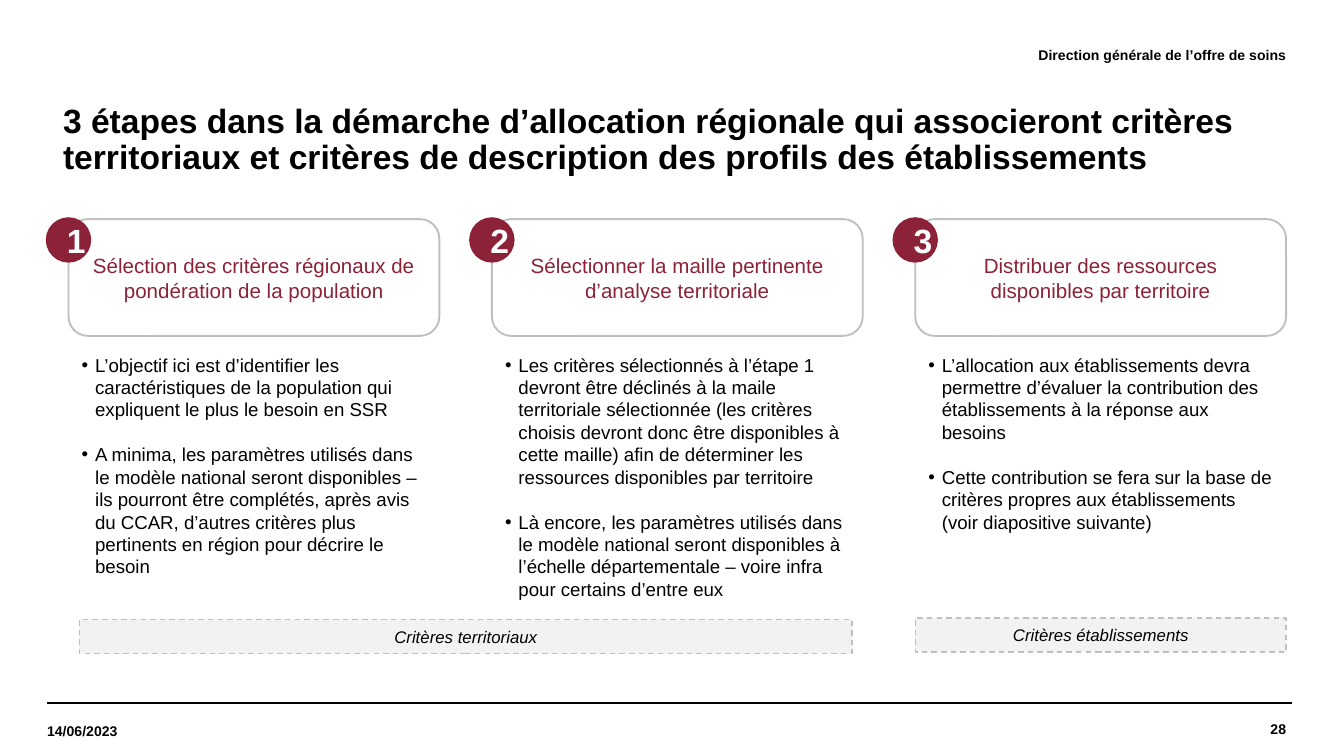
from lxml import etree
from pptx import Presentation
from pptx.dml.color import RGBColor
from pptx.enum import dml, shapes, text
from pptx.oxml import ns
from pptx.util import Pt

BLACK = RGBColor(0x00, 0x00, 0x00)
WHITE = RGBColor(0xFF, 0xFF, 0xFF)
WINE = RGBColor(0x8C, 0x22, 0x37)
GREY = RGBColor(0xBF, 0xBF, 0xBF)
PALE = RGBColor(0xF2, 0xF2, 0xF2)

FONT = "Arial"
LEFT = 36.7
STEP = 226.8
CARD_WIDTH = 198.7
CARD_TOP = 117.4
BADGE = 22.3

TITLE = (
    "3 étapes dans la démarche d’allocation régionale qui associeront critères "
    "territoriaux et critères de description des profils des établissements"
)
STEPS = [
    (
        "Sélection des critères régionaux de pondération de la population",
        [
            "L’objectif ici est d’identifier les caractéristiques de la population "
            "qui expliquent le plus le besoin en SSR",
            "A minima, les paramètres utilisés dans le modèle national seront "
            "disponibles – ils pourront être complétés, après avis du CCAR, d’autres "
            "critères plus pertinents en région pour décrire le besoin",
        ],
        128,
    ),
    (
        "Sélectionner la maille pertinente d’analyse territoriale",
        [
            "Les critères sélectionnés à l’étape 1 devront être déclinés à la maile "
            "territoriale sélectionnée (les critères choisis devront donc être "
            "disponibles à cette maille) afin de déterminer les ressources "
            "disponibles par territoire",
            "Là encore, les paramètres utilisés dans le modèle national seront "
            "disponibles à l’échelle départementale – voire infra pour certains "
            "d’entre eux",
        ],
        140,
    ),
    (
        "Distribuer des ressources disponibles par territoire",
        [
            "L’allocation aux établissements devra permettre d’évaluer la "
            "contribution des établissements à la réponse aux besoins",
            "Cette contribution se fera sur la base de critères propres aux "
            "établissements (voir diapositive suivante)",
        ],
        104,
    ),
]


def style(para, size, color=BLACK, align=text.PP_ALIGN.LEFT, bold=False, italic=False):
    para.alignment = align
    font = para.font
    font.name, font.size = FONT, Pt(size)
    font.bold, font.italic = bold, italic
    font.color.rgb = color


def add_title(page):
    title = page.shapes.title
    title.left, title.top, title.width, title.height = Pt(25.2), Pt(54), Pt(663), Pt(42.5)
    frame = title.text_frame
    frame.text = TITLE
    frame.word_wrap = True
    frame.auto_size = text.MSO_AUTO_SIZE.NONE
    frame.vertical_anchor = text.MSO_ANCHOR.MIDDLE
    frame.margin_left = Pt(8.6)
    para = frame.paragraphs[0]
    para.line_spacing = 0.9
    style(para, 18, bold=True)


def add_shape(page, kind, place, wording, size, fill, line, weight, **looks):
    shape = page.shapes.add_shape(kind, *map(Pt, place))
    shape.shadow.inherit = False
    shape.fill.solid()
    shape.fill.fore_color.rgb = fill
    shape.line.color.rgb = line
    shape.line.width = Pt(weight)
    frame = shape.text_frame
    frame.text = wording
    frame.vertical_anchor = text.MSO_ANCHOR.MIDDLE
    style(frame.paragraphs[0], size, align=text.PP_ALIGN.CENTER, **looks)
    return shape


def add_label(page, place, wording, align):
    frame = page.shapes.add_textbox(*map(Pt, place)).text_frame
    frame.word_wrap = True
    frame.vertical_anchor = text.MSO_ANCHOR.MIDDLE
    frame.margin_left = frame.margin_right = frame.margin_top = frame.margin_bottom = 0
    frame.text = wording
    style(frame.paragraphs[0], 7.5, align=align, bold=True)


def add_bullets(page, place, items):
    frame = page.shapes.add_textbox(*map(Pt, place)).text_frame
    frame.word_wrap = True
    for index, item in enumerate(items):
        para = frame.add_paragraph() if index else frame.paragraphs[0]
        para.text = item
        properties = para._p.get_or_add_pPr()
        properties.set("marL", str(Pt(7.2)))
        properties.set("indent", str(Pt(-7.2)))
        etree.SubElement(properties, ns.qn("a:buFont"), typeface=FONT)
        etree.SubElement(properties, ns.qn("a:buChar"), char="•")
        if index:
            para.space_before = Pt(12)
        style(para, 10)


def add_step(page, index, heading, items, height):
    left = LEFT + index * STEP
    add_shape(page, shapes.MSO_SHAPE.ROUNDED_RECTANGLE,
              (left, CARD_TOP, CARD_WIDTH, 62.6), heading, 11, WHITE, GREY, 1, color=WINE)
    add_shape(page, shapes.MSO_SHAPE.OVAL,
              (left - BADGE / 2, CARD_TOP, BADGE, BADGE), str(index + 1), 18,
              WINE, WINE, 2, color=WHITE, bold=True)
    add_bullets(page, (left, 185.8, CARD_WIDTH, height), items)


def add_criteria(page, place, wording):
    bar = add_shape(page, shapes.MSO_SHAPE.RECTANGLE, place, wording, 9,
                    PALE, GREY, 0.75, italic=True)
    bar.line.dash_style = dml.MSO_LINE.DASH


def add_rule(page, start, end, top):
    rule = page.shapes.add_connector(
        shapes.MSO_CONNECTOR.STRAIGHT, Pt(start), Pt(top), Pt(end), Pt(top))
    rule.line.color.rgb = BLACK
    rule.line.width = Pt(0.8)
    etree.SubElement(rule._element.spPr, ns.qn("a:effectLst"))


def main():
    deck = Presentation()
    deck.slide_width, deck.slide_height = Pt(720), Pt(405)
    page = deck.slides.add_slide(deck.slide_layouts[5])
    add_rule(page, 25.2, 692, 376.6)
    add_title(page)
    add_label(page, (226, 15.1, 463, 28.1), "Direction générale de l’offre de soins",
              text.PP_ALIGN.RIGHT)
    for index, (heading, items, height) in enumerate(STEPS):
        add_step(page, index, heading, items, height)
    add_criteria(page, (42.5, 331.9, 414, 18.2), "Critères territoriaux")
    add_criteria(page, (LEFT + 2 * STEP, 331.2, CARD_WIDTH, 18.2), "Critères établissements")
    add_label(page, (25.2, 378, 95, 27.4), "14/06/2023", text.PP_ALIGN.LEFT)
    add_label(page, (582.5, 376.6, 106.5, 28.1), "28", text.PP_ALIGN.RIGHT)
    deck.save("out.pptx")


if __name__ == "__main__":
    main()
